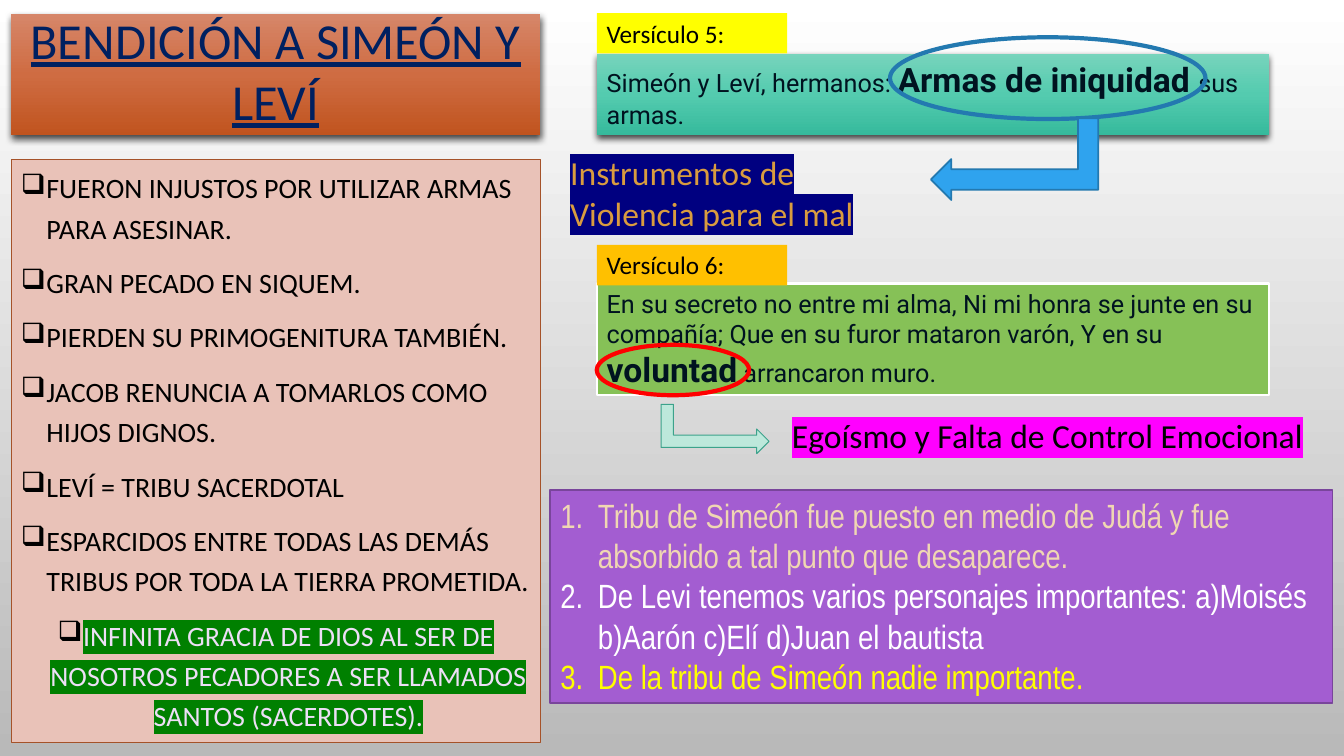
from dataclasses import dataclass

from lxml import etree
from pptx import Presentation
from pptx.dml.color import RGBColor
from pptx.enum.shapes import MSO_SHAPE
from pptx.enum.text import MSO_ANCHOR, MSO_AUTO_SIZE, PP_ALIGN
from pptx.oxml.ns import qn
from pptx.util import Cm, Pt

RECT, OVAL, BENT = MSO_SHAPE.RECTANGLE, MSO_SHAPE.OVAL, MSO_SHAPE.BENT_UP_ARROW
TOP, BOTTOM = MSO_ANCHOR.TOP, MSO_ANCHOR.BOTTOM
LEFT, CENTER = PP_ALIGN.LEFT, PP_ALIGN.CENTER
SHRINK = MSO_AUTO_SIZE.TEXT_TO_FIT_SHAPE


@dataclass(frozen=True)
class Theme:
    main: str = "Calibri"
    verse: str = "Roboto"
    narrow: str = "Arial Narrow"
    title_size: int = 36
    large: int = 24
    body_size: int = 20
    small: int = 18
    black: str = "000000"
    white: str = "FFFFFF"
    navy: str = "002060"
    ink: str = "001320"
    blue_line: str = "2379B0"
    red: str = "FF0000"
    yellow: str = "FFFF00"
    page_stops: tuple = ((0, "FFFFFF"), (100, "B9B9B9"))
    title_stops: tuple = ((0, "D68669"), (50, "CF6C42"), (100, "C0541F"))
    verse_stops: tuple = ((0, "77D4BC"), (50, "54CBAF"), (100, "36BA9C"))


THEME = Theme()


def add_child(parent, tag, **attributes):
    child = etree.SubElement(parent, qn(tag))
    for name, value in attributes.items():
        child.set(name, str(value))
    return child


def set_gradient(fill, owner, stops):
    """Vertical gradient from (percent, colour) stops."""
    fill.gradient()
    fill.gradient_angle = 270
    stop_list = next(owner.iter(qn("a:gsLst")))
    for old_stop in list(stop_list):
        stop_list.remove(old_stop)
    for percent, color in stops:
        stop = add_child(stop_list, "a:gs", pos=percent * 1000)
        add_child(stop, "a:srgbClr", val=color)


def add_shadow(shape):
    effects = shape._element.spPr.find(qn("a:effectLst"))
    shadow = add_child(effects, "a:outerShdw", blurRad=Pt(5), dist=Pt(2),
                       dir=90 * 60000, rotWithShape=0)
    color = add_child(shadow, "a:srgbClr", val=THEME.black)
    add_child(color, "a:alpha", val=69000)


def add_figure(page, kind, place, fill=None, line=None, width=1.0):
    """Preset shape; fill is a colour, gradient stops or None."""
    shape = page.shapes.add_shape(kind, *map(Cm, place))
    shape.shadow.inherit = False
    if fill is None:
        shape.fill.background()
    elif isinstance(fill, tuple):
        set_gradient(shape.fill, shape._element, fill)
        add_shadow(shape)
    else:
        shape.fill.solid()
        shape.fill.fore_color.rgb = RGBColor.from_string(fill)
    if line:
        shape.line.color.rgb = RGBColor.from_string(line)
        shape.line.width = Pt(width)
    else:
        shape.line.fill.background()
    return shape


def add_arrow(page, place, fill, line, width, flip=False):
    arrow = add_figure(page, BENT, place, fill, line, width)
    arrow.rotation = 90
    if flip:
        arrow._element.spPr.find(qn("a:xfrm")).set("flipV", "1")


def open_frame(shape, anchor=TOP):
    frame = shape.text_frame
    frame.word_wrap = True
    frame.vertical_anchor = anchor
    return frame


def next_para(frame, index):
    return frame.add_paragraph() if index else frame.paragraphs[0]


def set_indent(para, size):
    properties = para._p.get_or_add_pPr()
    properties.set("marL", str(Cm(size)))
    properties.set("indent", str(-Cm(size)))
    return properties


def style(para, name, size, color, align=LEFT):
    para.alignment = align
    para.font.name = name
    para.font.size = Pt(size)
    para.font.color.rgb = RGBColor.from_string(color)


def add_span(para, text, highlight=None):
    span = para.add_run()
    span.text = text
    if highlight:
        mark = add_child(span._r.get_or_add_rPr(), "a:highlight")
        add_child(mark, "a:srgbClr", val=highlight)
    return span


def add_label(page, text, place, fill):
    para = open_frame(add_figure(page, RECT, place, fill)).paragraphs[0]
    add_span(para, text)
    style(para, THEME.main, THEME.small, THEME.black)


def add_verse(page, before, strong, after, place, fill, line=None, width=1.0):
    para = open_frame(add_figure(page, RECT, place, fill, line, width)).paragraphs[0]
    add_span(para, before)
    key = add_span(para, strong)
    key.font.size = Pt(THEME.large)
    key.font.bold = True
    add_span(para, after)
    style(para, THEME.verse, THEME.small, THEME.ink)


def add_note(page, text, place, color, highlight):
    box = page.shapes.add_textbox(*map(Cm, place))
    para = open_frame(box).paragraphs[0]
    add_span(para, text, highlight)
    style(para, THEME.main, THEME.large, color)


def add_title(page, text):
    shape = add_figure(page, RECT, (0.28, 0.36, 13.34, 3.05), THEME.title_stops)
    para = open_frame(shape, BOTTOM).paragraphs[0]
    add_span(para, text)
    style(para, THEME.main, THEME.title_size, THEME.navy, CENTER)
    para.font.underline = True


def add_reasons(page, reasons, conclusion):
    shape = add_figure(page, RECT, (0.28, 4.01, 13.34, 14.71), "E9C2B8", "A55229", 0.75)
    frame = open_frame(shape)
    frame.auto_size = SHRINK
    for index, text in enumerate(reasons + [conclusion]):
        last = text == conclusion
        para = next_para(frame, index)
        properties = set_indent(para, 0.64)
        add_child(add_child(properties, "a:buClr"), "a:srgbClr", val=THEME.black)
        add_child(properties, "a:buChar", char="❑")
        para.line_spacing = 1.2
        if index:
            para.space_before = Pt(10)
        add_span(para, text, "008000" if last else None)
        style(para, THEME.main, THEME.body_size,
              "EDDFF6" if last else THEME.black, CENTER if last else LEFT)


def add_facts(page, facts):
    shape = add_figure(page, RECT, (13.87, 12.34, 19.71, 5.38), "A35DD1", "79459B", 1.25)
    frame = open_frame(shape)
    for index, (text, color) in enumerate(facts):
        para = next_para(frame, index)
        add_child(set_indent(para, 0.95), "a:buAutoNum", type="arabicPeriod")
        add_span(para, text)
        style(para, THEME.narrow, THEME.large, color)


def main():
    deck = Presentation()
    deck.slide_width, deck.slide_height = Cm(33.87), Cm(19.05)
    page = deck.slides.add_slide(deck.slide_layouts[6])
    set_gradient(page.background.fill, page._element, THEME.page_stops)

    # Left column
    add_title(page, "BENDICIÓN A SIMEÓN Y LEVÍ")
    add_reasons(page, [
        "FUERON INJUSTOS POR UTILIZAR ARMAS PARA ASESINAR.",
        "GRAN PECADO EN SIQUEM.",
        "PIERDEN SU PRIMOGENITURA TAMBIÉN.",
        "JACOB RENUNCIA A TOMARLOS COMO HIJOS DIGNOS.",
        "LEVÍ = TRIBU SACERDOTAL",
        "ESPARCIDOS ENTRE TODAS LAS DEMÁS TRIBUS POR TODA LA TIERRA PROMETIDA.",
    ], "INFINITA GRACIA DE DIOS AL SER DE NOSOTROS PECADORES A SER LLAMADOS "
       "SANTOS (SACERDOTES).")

    # Verse 5
    add_verse(page, "Simeón y Leví, hermanos: ", "Armas de iniquidad ", "sus armas.",
              (15.04, 1.35, 16.94, 2.06), THEME.verse_stops)
    add_figure(page, OVAL, (22.43, 0.94, 7.95, 2.06), None, THEME.blue_line, 3)
    add_label(page, "Versículo 5:", (15.04, 0.33, 4.8, 1.02), THEME.yellow)
    add_arrow(page, (24.54, 1.9, 2.06, 4.22), "2FA3EE", THEME.blue_line, 1.25, flip=True)
    add_note(page, "Instrumentos de Violencia para el mal",
             (14.12, 3.71, 9.22, 2.31), "D99C3F", "000080")

    # Verse 6
    add_verse(page, "En su secreto no entre mi alma, Ni mi honra se junte en su compañía; "
              "Que en su furor mataron varón, Y en su ", "voluntad", " arrancaron muro.",
              (15.04, 7.14, 16.94, 2.82), "86C157", THEME.white, 1.75)
    add_label(page, "Versículo 6:", (15.04, 6.17, 4.8, 1.02), "FFC000")
    add_figure(page, OVAL, (15.04, 8.69, 3.84, 1.27), None, THEME.red, 3)
    add_arrow(page, (17.4, 9.45, 1.24, 2.72), "BDE8DB", "3CA28B", 0.75)
    add_note(page, "Egoísmo y Falta de Control Emocional",
             (19.71, 10.34, 13.39, 1.27), THEME.black, "FF00FF")

    # Outcome of both tribes
    add_facts(page, [
        ("Tribu de Simeón fue puesto en medio de Judá y fue absorbido a tal punto "
         "que desaparece.", "F0D7B2"),
        ("De Levi tenemos varios personajes importantes: a)Moisés b)Aarón c)Elí "
         "d)Juan el bautista", THEME.white),
        ("De la tribu de Simeón nadie importante.", THEME.yellow),
    ])
    deck.save("out.pptx")


if __name__ == "__main__":
    main()
